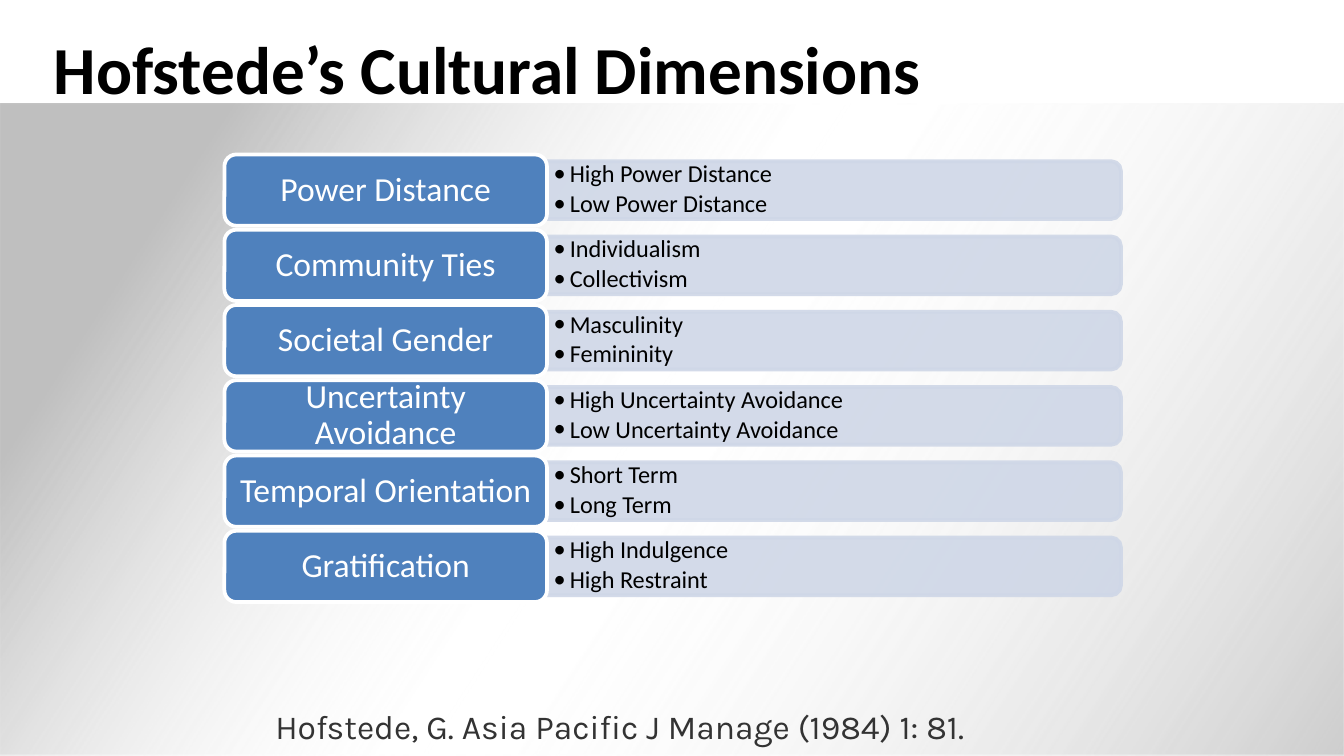
from lxml import etree
from pptx import Presentation
from pptx.dml.color import RGBColor
from pptx.enum.shapes import MSO_SHAPE
from pptx.enum.text import MSO_ANCHOR, PP_ALIGN
from pptx.oxml import parse_xml
from pptx.oxml.ns import nsdecls, qn
from pptx.util import Inches, Pt

RECT = MSO_SHAPE.RECTANGLE
ROUNDED = MSO_SHAPE.ROUNDED_RECTANGLE
ROUND_TOP = MSO_SHAPE.ROUND_2_SAME_RECTANGLE
TOP, MIDDLE = MSO_ANCHOR.TOP, MSO_ANCHOR.MIDDLE
LEFT, CENTER = PP_ALIGN.LEFT, PP_ALIGN.CENTER

SLIDE_WIDTH = 10
SLIDE_HEIGHT = SLIDE_WIDTH * 9 / 16

COLORS = {
    "gray": "BFBFBF",
    "white": "FFFFFF",
    "black": "000000",
    "label": "4F81BD",
    "bar": "CFD7E7",
    "citation": "333333",
}
# Panel gradient: position %, colour, opacity %
PANEL_STOPS = [(0, "gray", 77), (52, "white", 0), (87, "gray", 100), (100, "gray", 100)]
PANEL_ANGLE = 213

DIMENSIONS = [
    ("Power Distance", ["High Power Distance", "Low Power Distance"]),
    ("Community Ties", ["Individualism", "Collectivism"]),
    ("Societal Gender", ["Masculinity", "Femininity"]),
    ("Uncertainty Avoidance", ["High Uncertainty Avoidance", "Low Uncertainty Avoidance"]),
    ("Temporal Orientation", ["Short Term", "Long Term"]),
    ("Gratification", ["High Indulgence", "High Restraint"]),
]
LABEL_WIDTH, LABEL_HEIGHT = 2.4, 0.53
BAR_HEIGHT, ROW_PITCH = 0.43, 0.56
CORNER = 0.167


def color(name):
    return RGBColor.from_string(COLORS[name])


def set_frame(frame, anchor, inset_x, inset_y):
    frame.word_wrap = True
    frame.vertical_anchor = anchor
    frame.margin_left = frame.margin_right = Inches(inset_x)
    frame.margin_top = frame.margin_bottom = Inches(inset_y)


def format_runs(paragraph, size, color_name, font="Calibri", bold=False):
    for run in paragraph.runs:
        run.font.name = font
        run.font.size = Pt(size)
        run.font.bold = bold
        run.font.color.rgb = color(color_name)


def add_filled(slide, kind, box, fill, line):
    shape = slide.shapes.add_shape(kind, *map(Inches, box))
    shape.shadow.inherit = False
    shape.fill.solid()
    shape.fill.fore_color.rgb = color(fill)
    shape.line.color.rgb = color(line)
    shape.line.width = Pt(2)
    return shape


def add_panel(slide, box):
    panel = slide.shapes.add_shape(RECT, *map(Inches, box))
    panel.shadow.inherit = False
    panel.line.fill.background()
    stops = "".join(
        f'<a:gs pos="{position * 1000}"><a:srgbClr val="{COLORS[name]}">'
        f'<a:alpha val="{opacity * 1000}"/></a:srgbClr></a:gs>'
        for position, name, opacity in PANEL_STOPS
    )
    panel._element.spPr.find(qn("a:prstGeom")).addnext(parse_xml(
        f'<a:gradFill {nsdecls("a")} rotWithShape="1"><a:gsLst>{stops}</a:gsLst>'
        f'<a:lin ang="{PANEL_ANGLE * 60000}" scaled="0"/></a:gradFill>'
    ))
    # Behind the title
    slide.shapes._spTree.insert(2, panel._element)


def add_title(slide, box):
    title = slide.shapes.title
    title.left, title.top, title.width, title.height = map(Inches, box)
    title.text_frame.text = "Hofstede’s Cultural Dimensions"
    set_frame(title.text_frame, TOP, 0.1, 0.05)
    heading = title.text_frame.paragraphs[0]
    heading.alignment = LEFT
    format_runs(heading, 36, "black", bold=True)


def add_bullet(paragraph):
    properties = paragraph._p.get_or_add_pPr()
    properties.set("marL", str(Inches(0.12)))
    properties.set("indent", str(-Inches(0.12)))
    etree.SubElement(properties, qn("a:buFont")).set("typeface", "Calibri")
    etree.SubElement(properties, qn("a:buChar")).set("char", "•")


def add_bar(slide, box):
    left, top, width, height = box
    # Turned a quarter so that the rounded corners face right
    upright = (left + (width - height) / 2, top + (height - width) / 2, height, width)
    bar = add_filled(slide, ROUND_TOP, upright, "bar", "bar")
    bar.rotation = 90
    bar.adjustments[0], bar.adjustments[1] = CORNER, 0
    for tint in bar._element.spPr.iter(qn("a:srgbClr")):
        etree.SubElement(tint, qn("a:alpha")).set("val", "90000")


def add_poles(slide, box, poles):
    frame = slide.shapes.add_textbox(*map(Inches, box)).text_frame
    set_frame(frame, MIDDLE, 0.05, 0.03)
    frame.text = "\n".join(poles)
    for index, paragraph in enumerate(frame.paragraphs):
        paragraph.level = 1
        paragraph.line_spacing = 0.9
        if index:
            paragraph.space_before = Pt(1.9)
        add_bullet(paragraph)
        format_runs(paragraph, 13, "black")


def add_label(slide, box, dimension):
    label = add_filled(slide, ROUNDED, box, "label", "white")
    label.adjustments[0] = CORNER
    set_frame(label.text_frame, MIDDLE, 0.07, 0.04)
    label.text_frame.text = dimension
    paragraph = label.text_frame.paragraphs[0]
    paragraph.alignment = CENTER
    paragraph.line_spacing = 0.9
    format_runs(paragraph, 18, "white")


def add_dimensions(slide, left, top, width):
    bar_left, bar_width = left + LABEL_WIDTH, width - LABEL_WIDTH
    for row, (dimension, poles) in enumerate(DIMENSIONS):
        row_top = top + row * ROW_PITCH
        bar_top = row_top + (LABEL_HEIGHT - BAR_HEIGHT) / 2
        add_bar(slide, (bar_left, bar_top, bar_width, BAR_HEIGHT))
        add_poles(slide, (bar_left, bar_top + 0.02, bar_width - 0.03, 0.38), poles)
        add_label(slide, (left, row_top, LABEL_WIDTH, LABEL_HEIGHT), dimension)


def add_citation(slide, box):
    frame = slide.shapes.add_textbox(*map(Inches, box)).text_frame
    set_frame(frame, TOP, 0.1, 0.05)
    frame.text = "Hofstede, G. Asia Pacific J Manage (1984) 1: 81."
    format_runs(frame.paragraphs[0], 18, "citation", font="Karla")


def main():
    deck = Presentation()
    deck.slide_width, deck.slide_height = Inches(SLIDE_WIDTH), Inches(SLIDE_HEIGHT)
    slide = deck.slides.add_slide(deck.slide_layouts[5])  # title only
    panel_top = 0.77
    add_panel(slide, (0, panel_top, SLIDE_WIDTH, SLIDE_HEIGHT - panel_top))
    add_title(slide, (0.3, 0.15, 6.73, 0.53))
    add_dimensions(slide, 1.67, 1.15, 6.67)
    add_citation(slide, (1.95, 5.2, 7.06, 0.3))
    deck.save("out.pptx")


if __name__ == "__main__":
    main()
